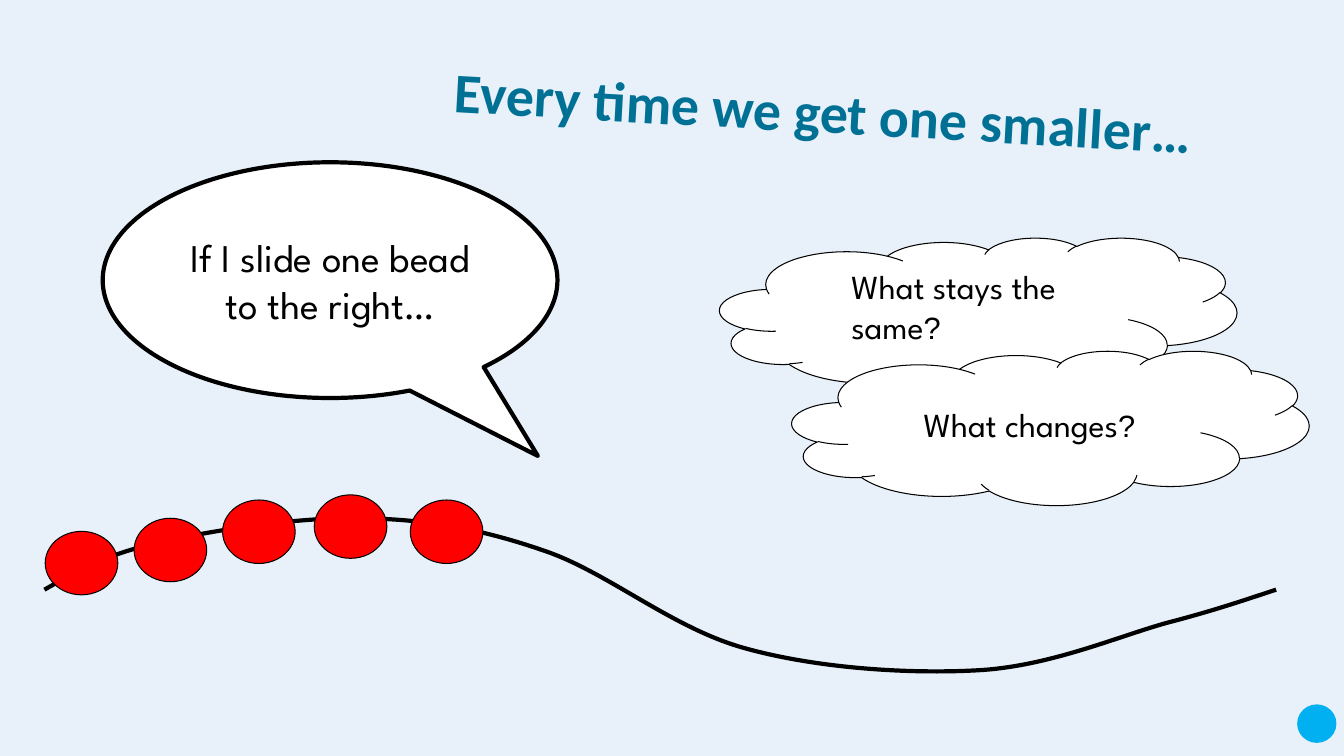
from dataclasses import dataclass

from lxml.etree import SubElement
from pptx import Presentation
from pptx.dml.color import RGBColor
from pptx.enum.shapes import MSO_SHAPE as Shape
from pptx.enum.text import MSO_ANCHOR as Anchor, PP_ALIGN as Align
from pptx.oxml.ns import qn
from pptx.util import Cm, Pt


@dataclass(frozen=True)
class Theme:
    background: str = "E8F1F9"
    title: str = "007195"
    ink: str = "000000"
    paper: str = "FFFFFF"
    bead: str = "FF0000"
    dot: str = "00B0F0"
    title_font: str = "Calibri"
    speech_font: str = "League Spartan"
    mark_font: str = "Arial"
    title_size: float = 40
    speech_size: float = 28
    thought_size: float = 24
    mark_size: float = 22
    thick: float = 3
    thin: float = 0.75


T = Theme()

# Left and top of each bead, and of each thought cloud
BEADS = [(1.14, 13.39), (3.38, 13.06), (5.61, 12.6), (7.92, 12.47), (10.34, 12.6)]
CLOUDS = [
    (18.14, 5.99, "What stays the same", Anchor.TOP),
    (19.96, 8.84, "What changes", Anchor.MIDDLE),
]

# Start of the string, then two control points and an end for each bend
STRING_START = (1.12, 14.86)
STRING_BENDS = [
    [(1.93, 14.4), (2.72, 13.94), (4.04, 13.67)],
    [(5.36, 13.36), (7.49, 13.03), (9.09, 13.06)],
    [(10.69, 13.08), (12.07, 13.31), (13.69, 13.87)],
    [(15.29, 14.4), (16.92, 15.82), (18.75, 16.33)],
    [(20.57, 16.84), (22.89, 16.99), (24.66, 16.89)],
    [(26.44, 16.79), (28.14, 16.05), (29.39, 15.7)],
    [(30.66, 15.37), (31.39, 15.11), (32.16, 14.86)],
]


def rgb(color):
    return RGBColor.from_string(color)


def set_line(sp, width):
    sp.line.color.rgb = rgb(T.ink)
    sp.line.width = Pt(width)


def add_shape(s, kind, box, fill, line_width=None):
    sp = s.shapes.add_shape(kind, *map(Cm, box))
    sp.shadow.inherit = False
    sp.fill.solid()
    sp.fill.fore_color.rgb = rgb(fill)
    if line_width:
        set_line(sp, line_width)
    else:
        sp.line.fill.background()
    return sp


def write(sp, runs, color=T.ink, anchor=Anchor.MIDDLE, align=Align.CENTER, bold=False):
    """Fill one paragraph with (text, font name, size) runs."""
    tf = sp.text_frame
    tf.word_wrap = True
    tf.vertical_anchor = anchor
    p = tf.paragraphs[0]
    p.alignment = align
    for text, name, size in runs:
        r = p.add_run()
        r.text = text
        for key, value in dict(name=name, size=Pt(size), bold=bold).items():
            setattr(r.font, key, value)
        r.font.color.rgb = rgb(color)
    return p


def add_title(s, text):
    sp = s.shapes.add_textbox(Cm(8.51), Cm(2.01), Cm(24.41), Cm(2.54))
    sp.rotation = 3.2
    p = write(sp, [(text, T.title_font, T.title_size)], T.title, Anchor.TOP, bold=True)
    p.line_spacing = 0.9


def add_string(s):
    points = [(Cm(x), Cm(y)) for bend in STRING_BENDS for x, y in bend]
    builder = s.shapes.build_freeform(*map(Cm, STRING_START))
    builder.add_line_segments(points, close=False)
    sp = builder.convert_to_shape()
    sp.shadow.inherit = False
    sp.fill.background()
    set_line(sp, T.thick)
    # Join every three straight steps into one cubic curve
    outline = next(sp.element.iter(qn("a:path")))
    steps = outline.findall(qn("a:lnTo"))
    for i in range(0, len(steps), 3):
        curve = SubElement(outline, qn("a:cubicBezTo"))
        for step in steps[i:i + 3]:
            curve.append(step[0])
            outline.remove(step)


def add_cloud(s, left, top, text, anchor):
    sp = add_shape(s, Shape.CLOUD, (left, top, 13.03, 3.89), T.paper, T.thin)
    runs = [(text, T.speech_font, T.thought_size), ("?", T.mark_font, T.mark_size)]
    p = write(sp, runs, anchor=anchor, align=Align.LEFT)
    pPr = p._p.get_or_add_pPr()
    pPr.set("marL", str(Cm(1.27)))
    pPr.set("indent", "0")


def add_speech(s, text):
    sp = add_shape(s, Shape.OVAL_CALLOUT, (2.59, 4.09, 11.46, 5.94), T.paper, T.thick)
    sp.adjustments[0], sp.adjustments[1] = 0.457, 0.746
    write(sp, [(text, T.speech_font, T.speech_size)])


def main():
    prs = Presentation()
    prs.slide_width, prs.slide_height = Cm(33.87), Cm(19.05)
    s = prs.slides.add_slide(prs.slide_layouts[6])
    s.background.fill.solid()
    s.background.fill.fore_color.rgb = rgb(T.background)

    # Bead string and title
    add_string(s)
    add_title(s, "Every time we get one smaller…")
    for left, top in BEADS:
        add_shape(s, Shape.OVAL, (left, top, 1.83, 1.6), T.bead, T.thin)

    # Questions and prompt
    for cloud in CLOUDS:
        add_cloud(s, *cloud)
    add_speech(s, "If I slide one bead to the right…")

    # Corner dot
    add_shape(s, Shape.OVAL, (32.69, 17.75, 0.99, 0.97), T.dot)
    prs.save("out.pptx")


if __name__ == "__main__":
    main()
